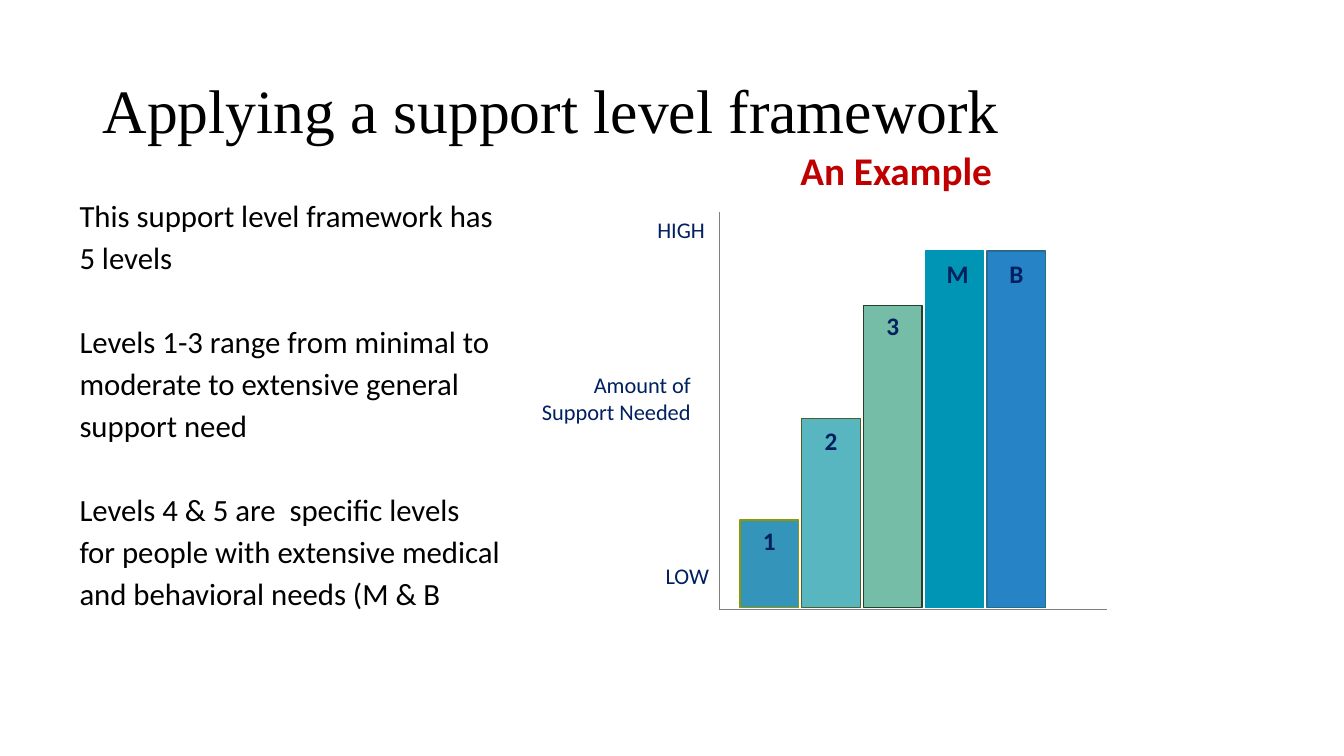
from lxml.etree import SubElement
from pptx import Presentation
from pptx.dml.color import RGBColor
from pptx.enum.shapes import MSO_CONNECTOR, MSO_SHAPE
from pptx.enum.text import MSO_ANCHOR, MSO_AUTO_SIZE, PP_ALIGN
from pptx.oxml.ns import qn
from pptx.util import Inches, Pt

BLACK = RGBColor(0x00, 0x00, 0x00)
NAVY = RGBColor(0x00, 0x20, 0x60)
RED = RGBColor(0xC0, 0x00, 0x00)
GRAY = RGBColor(0x80, 0x80, 0x80)

TITLE = "Applying a support level framework"
EXAMPLE = "An Example"
NOTES = [
    "This support level framework has 5 levels",
    "Levels 1-3 range from minimal to moderate to extensive general support need",
    "Levels 4 & 5 are  specific levels for people with extensive medical "
    "and behavioral needs (M & B",
]
# name, height, fill, line, label offset from the bar's top left corner
BARS = [
    ("1", 0.87, RGBColor(0x34, 0x94, 0xBA), RGBColor(0x8D, 0x99, 0x00), (0, 0)),
    ("2", 1.88, RGBColor(0x58, 0xB6, 0xC0), RGBColor(0x4F, 0x5F, 0x2B), (0, 0.02)),
    ("3", 3.0, RGBColor(0x75, 0xBD, 0xA7), RGBColor(0x20, 0x42, 0x2A), (0, 0)),
    ("M", 3.54, RGBColor(0x00, 0x94, 0xB5), RGBColor(0x00, 0x94, 0xB5), (0.03, 0.02)),
    ("B", 3.54, RGBColor(0x26, 0x83, 0xC6), RGBColor(0x26, 0x6D, 0x8A), (0, 0.02)),
]
# text, box
SCALE = [
    ("HIGH", (6.04, 2.1, 1.05, 0.37)),
    ("LOW", (5.7, 5.53, 1.43, 0.37)),
    ("Amount of Support Needed", (5.2, 3.63, 1.75, 0.64)),
]
ORIGIN = (7.13, 6.05)
AXIS_ENDS = [(7.13, 2.1), (10.98, 6.05)]
FIRST, LAST = 7.34, 9.79
BASE, WIDTH = 6.03, 0.58


def add_text(slide, box, paras, size, color, bold=False, font="Calibri",
             align=PP_ALIGN.LEFT, anchor=MSO_ANCHOR.TOP, lines=None, gap=None):
    """Add a wrapping text box; gap is the space before all but the first paragraph."""
    frame = slide.shapes.add_textbox(*map(Inches, box)).text_frame
    frame.word_wrap = True
    frame.auto_size = MSO_AUTO_SIZE.NONE
    frame.vertical_anchor = anchor
    for i, text in enumerate(paras):
        para = frame.add_paragraph() if i else frame.paragraphs[0]
        para.alignment = align
        para.line_spacing = lines
        if i:
            para.space_before = gap
        run = para.add_run()
        run.text = text
        run.font.name = font
        run.font.size = Pt(size)
        run.font.bold = bold
        run.font.color.rgb = color


def add_bar(slide, box, fill, line):
    bar = slide.shapes.add_shape(MSO_SHAPE.RECTANGLE, *map(Inches, box))
    bar.shadow.inherit = False
    bar.fill.solid()
    bar.fill.fore_color.rgb = fill
    bar.line.color.rgb = line
    bar.line.width = Pt(1)


def add_axis(slide, start, end):
    axis = slide.shapes.add_connector(
        MSO_CONNECTOR.STRAIGHT, *map(Inches, start + end))
    axis.line.color.rgb = GRAY
    axis.line.width = Pt(0.5)
    SubElement(axis._element.spPr, qn("a:effectLst"))


def main():
    deck = Presentation()
    deck.slide_width, deck.slide_height = Inches(13.33), Inches(7.5)
    slide = deck.slides.add_slide(deck.slide_layouts[6])

    step = (LAST - FIRST) / (len(BARS) - 1)
    for i, (name, height, fill, line, (dx, dy)) in enumerate(BARS):
        left, top = FIRST + i * step, BASE - height
        add_bar(slide, (left, top, WIDTH, height), fill, line)
        add_text(slide, (left + dx, top + dy, WIDTH, 0.4), [name], 18, NAVY,
                 bold=True, align=PP_ALIGN.CENTER)
    for end in AXIS_ENDS:
        add_axis(slide, ORIGIN, end)
    for text, box in SCALE:
        add_text(slide, box, [text], 16, NAVY, align=PP_ALIGN.RIGHT)

    add_text(slide, (0.92, 0.4, 11.5, 1.45), [TITLE], 44, BLACK,
             font="Times New Roman", anchor=MSO_ANCHOR.MIDDLE, lines=0.9)
    add_text(slide, (0.69, 1.85, 4.39, 4.28), NOTES, 22, BLACK,
             lines=Pt(30), gap=Pt(30))
    add_text(slide, (7.84, 1.4, 2.42, 0.57), [EXAMPLE], 28, RED, bold=True)
    deck.save("out.pptx")


if __name__ == "__main__":
    main()
